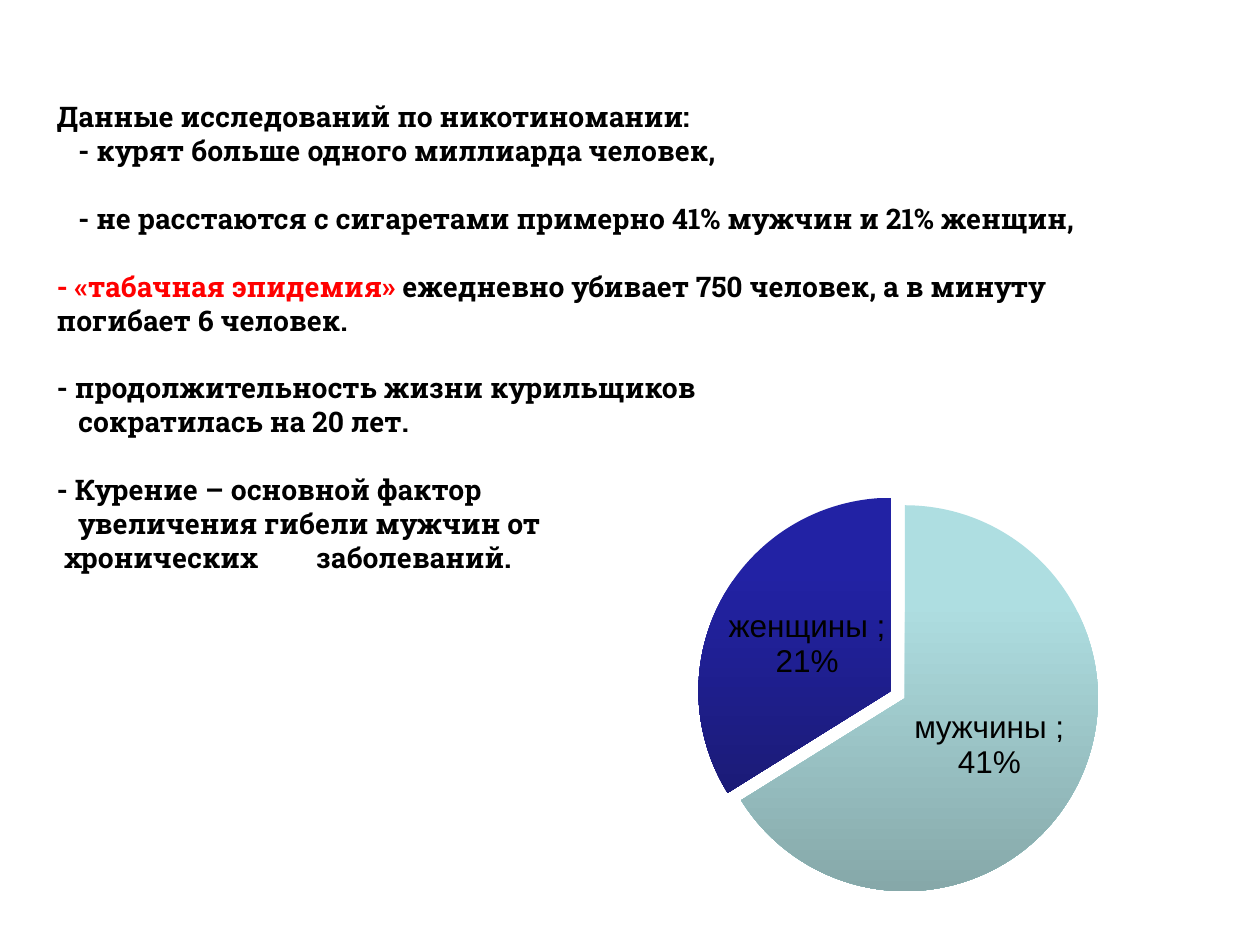
"""Build a slide on smoking statistics with a pie chart."""
from lxml.etree import SubElement
from pptx import Presentation
from pptx.chart.data import CategoryChartData
from pptx.dml.color import RGBColor
from pptx.enum.chart import XL_CHART_TYPE as ChartType, XL_LABEL_POSITION as LabelPos
from pptx.enum.text import MSO_ANCHOR as Anchor, MSO_AUTO_SIZE as AutoSize, PP_ALIGN as Align
from pptx.oxml import parse_xml
from pptx.oxml.ns import nsdecls, qn
from pptx.util import Inches, Pt

TITLE_ONLY = 5
LINE = 19.4
STEP = 0.17
RED = "FF0000"


def color(value):
    """Turn a hex string into a colour."""
    return RGBColor.from_string(value)


def add_text(p, text, font="Roboto Slab", size=16.2, bold=True, fill="000000"):
    """Add a formatted run to a paragraph, with a line break at each newline."""
    for i, part in enumerate(text.split("\n")):
        if i:
            p.add_line_break()
        r = p.add_run()
        r.text = part
        f = r.font
        f.name, f.size, f.bold = font, Pt(size), bold
        f.color.rgb = color(fill)


class Deck:
    """Hold the presentation, its slide and the shared style."""

    def __init__(self, width=10, height=7.5):
        """Start a presentation with one title-only slide."""
        self.prs = Presentation()
        self.prs.slide_width, self.prs.slide_height = Inches(width), Inches(height)
        self.slide = self.prs.slides.add_slide(self.prs.slide_layouts[TITLE_ONLY])

    def box(self, x, y, w, h):
        """Turn shares of the slide into lengths."""
        width, height = self.prs.slide_width, self.prs.slide_height
        return int(x * width), int(y * height), int(w * width), int(h * height)

    def title(self, area, lines):
        """Fill the title with (runs, left, indent, gap before, tab) lines."""
        sp = self.slide.shapes.title
        sp.left, sp.top, sp.width, sp.height = self.box(*area)
        tf = sp.text_frame
        tf.word_wrap, tf.vertical_anchor = True, Anchor.TOP
        tf.auto_size = AutoSize.NONE
        tf.margin_top = Inches(0.48)
        for i, (runs, left, indent, gap, tab) in enumerate(lines):
            p = tf.paragraphs[0] if i == 0 else tf.add_paragraph()
            p.alignment, p.line_spacing = Align.LEFT, Pt(LINE)
            p.space_before = Pt(LINE if gap else 0)
            pPr = p._p.get_or_add_pPr()
            pPr.set("marL", str(Inches(left)))
            pPr.set("indent", str(Inches(indent)))
            if tab:
                tabs = SubElement(pPr, qn("a:tabLst"))
                SubElement(tabs, qn("a:tab"), pos=str(Inches(tab)), algn="l")
            for text, fill in runs:
                add_text(p, text, fill=fill)

    def pie(self, area, layout, name, slices, explosion):
        """Add a labelled pie from (category, value, top, bottom) slices."""
        data = CategoryChartData(number_format="0%")
        data.categories = [s[0] for s in slices]
        data.add_series(name, [s[1] for s in slices])
        chart = self.slide.shapes.add_chart(ChartType.PIE, *self.box(*area), data).chart
        chart.has_legend = chart.has_title = False
        f = chart.font
        f.name, f.size, f.color.rgb = "Arial", Pt(18), color("000000")
        plot = chart.plots[0]
        plot.vary_by_categories = True
        for i, (_, _, top, bottom) in enumerate(slices):
            point = plot.series[0].points[i]
            fill = point.format.fill
            fill.gradient()
            fill.gradient_angle = 270
            for stop, (value, place) in zip(fill.gradient_stops, ((top, 0.25), (bottom, 1))):
                stop.color.rgb, stop.position = color(value), place
            point.format.line.fill.background()
        last = plot.series[0]._element.findall(qn("c:dPt"))[-1]
        last.find(qn("c:spPr")).addprevious(
            parse_xml(f'<c:explosion {nsdecls("c")} val="{explosion}"/>'))
        plot.has_data_labels = True
        labels = plot.data_labels
        labels.show_category_name = labels.show_value = True
        labels.show_percentage = False
        labels.number_format, labels.number_format_is_linked = "0%", False
        labels.position = LabelPos.CENTER
        separator = parse_xml(f'<c:separator {nsdecls("c")}>; </c:separator>')
        labels._element.find(qn("c:showBubbleSize")).addnext(separator)
        self.set_layout(chart, layout)

    def set_layout(self, chart, layout):
        """Fix the inner plot area as shares of the chart."""
        places = "".join(f'<c:{k} val="{v}"/>' for k, v in zip("xywh", layout))
        modes = '<c:xMode val="edge"/><c:yMode val="edge"/>'
        area = chart._chartSpace.chart.plotArea
        for old in area.findall(qn("c:layout")):
            area.remove(old)
        area.insert(0, parse_xml(
            f'<c:layout {nsdecls("c")}><c:manualLayout><c:layoutTarget val="inner"/>'
            f'{modes}{places}</c:manualLayout></c:layout>'))


def line(*runs, left=0, indent=0, gap=False, tab=None):
    """Describe one line of the title from texts or (text, colour) pairs."""
    pairs = [(r, "000000") if isinstance(r, str) else r for r in runs]
    return pairs, left, indent, gap, tab


def main():
    """Build and save the slide."""
    deck = Deck()
    deck.title((0.035, 0.041, 0.847, 0.459), [
        line("Данные исследований по никотиномании:"),
        line("- курят больше одного миллиарда человек,", left=STEP),
        line("- не расстаются с сигаретами примерно 41% мужчин и 21% женщин,",
             left=STEP, gap=True),
        line(("- «табачная эпидемия» ", RED),
             "ежедневно убивает 750 человек, а в минуту погибает 6 человек.", gap=True),
        line("- продолжительность жизни курильщиков\nсократилась на 20 лет.",
             left=STEP, indent=-STEP, gap=True),
        line("- Курение – основной фактор\nувеличения гибели мужчин от",
             left=STEP, indent=-STEP, gap=True),
        line("хронических\tзаболеваний.", left=0.06, tab=1.86),
    ])
    deck.pie((0.532, 0.512, 0.414, 0.445), (0.08, 0.05, 0.74, 0.92), "Series 1", [
        ("мужчины ", 0.41, "AEDEE1", "86A8A9"),
        ("женщины ", 0.21, "2222A4", "1B1B77"),
    ], explosion=8)
    deck.prs.save("out.pptx")


if __name__ == "__main__":
    main()
